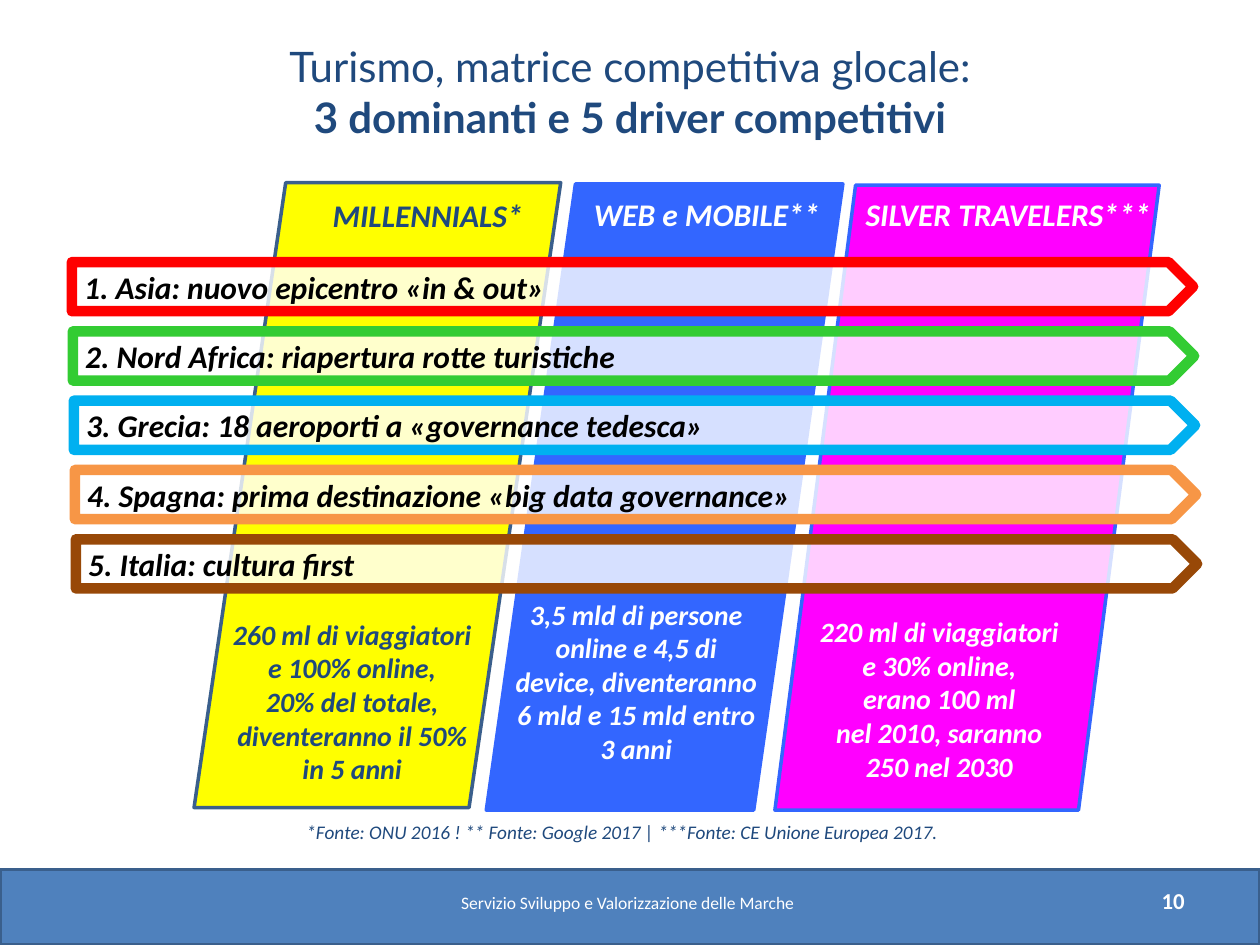
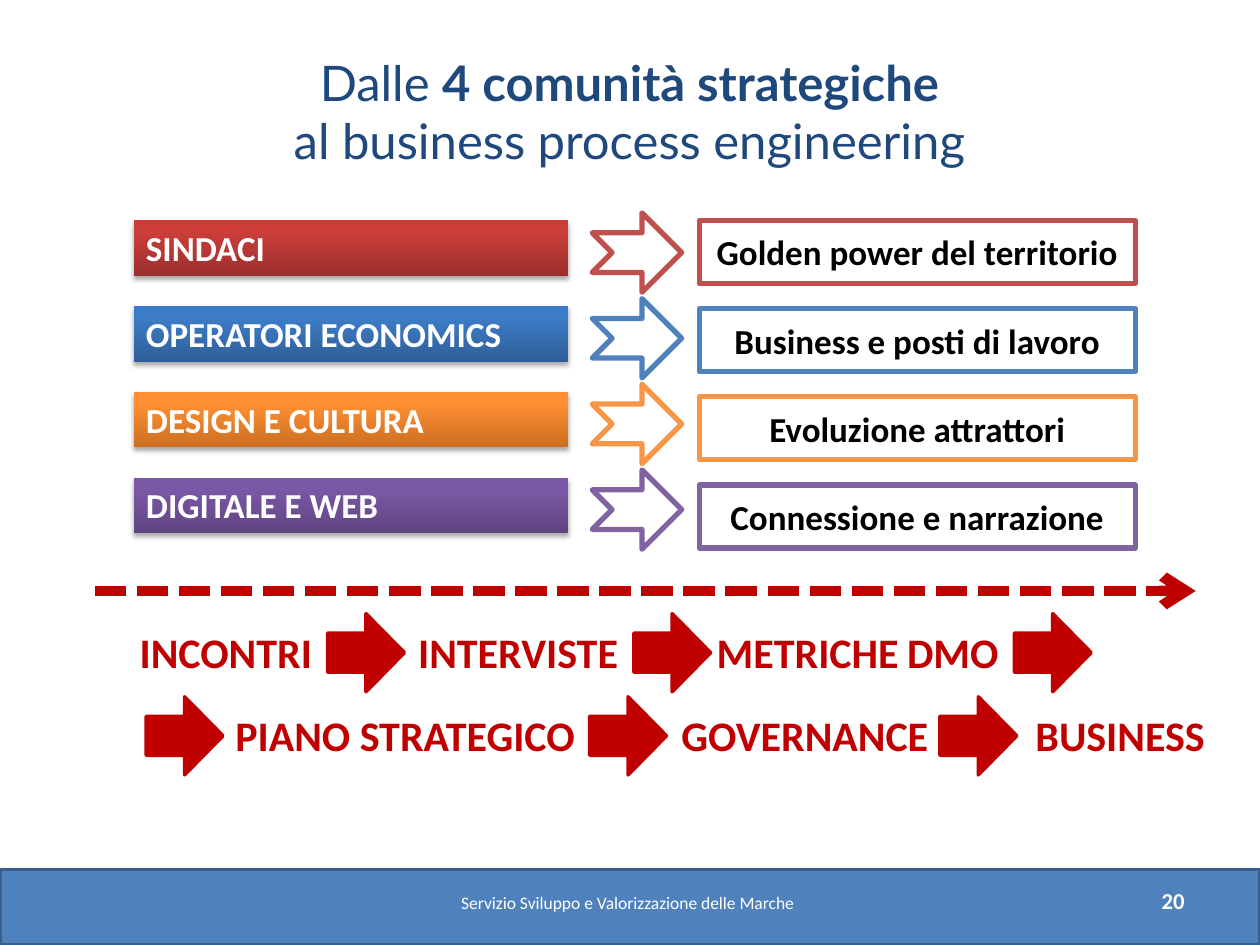
"""Build two slides on competitive tourism drivers and strategic communities."""
from copy import deepcopy
from dataclasses import dataclass
from typing import NamedTuple

from lxml import etree
from pptx import Presentation
from pptx.dml.color import RGBColor
from pptx.enum.shapes import MSO_CONNECTOR, MSO_SHAPE
from pptx.enum.text import MSO_ANCHOR, MSO_AUTO_SIZE, PP_ALIGN
from pptx.oxml.ns import qn
from pptx.util import Emu, Inches, Pt

RECTANGLE = MSO_SHAPE.RECTANGLE
PARALLELOGRAM = MSO_SHAPE.PARALLELOGRAM
PENTAGON = MSO_SHAPE.PENTAGON
RIGHT_ARROW = MSO_SHAPE.RIGHT_ARROW
NOTCHED_ARROW = MSO_SHAPE.NOTCHED_RIGHT_ARROW
STRAIGHT = MSO_CONNECTOR.STRAIGHT
LEFT, CENTER, RIGHT = PP_ALIGN.LEFT, PP_ALIGN.CENTER, PP_ALIGN.RIGHT
TOP, MIDDLE = MSO_ANCHOR.TOP, MSO_ANCHOR.MIDDLE
FIXED_SIZE = MSO_AUTO_SIZE.NONE

WIDTH, HEIGHT = Inches(10), Inches(7.5)
COLUMNS, ROWS = 100, 75
TITLE_ONLY = 5
TITLE_FONT, BODY_FONT = "Lato", "Calibri"
WHITE, BLACK, NAVY, CRIMSON = "FFFFFF", "000000", "1F497D", "C00000"
BAND_FILL, BAND_LINE = "4F81BD", "3A5F8C"
ROYAL, ORANGE = "3366FF", "F79646"
FOOTER = "Servizio Sviluppo e Valorizzazione delle Marche"


class Area(NamedTuple):
    """A rectangle in grid columns and rows."""
    column: float
    row: float
    columns: float
    rows: float


class Span(NamedTuple):
    """A stretch of title text."""
    text: str
    bold: bool = False


class Style(NamedTuple):
    """The look and alignment of a block of text."""
    size: float
    color: str
    bold: bool = True
    italic: bool = False
    align: PP_ALIGN = LEFT
    anchor: MSO_ANCHOR = TOP


@dataclass(frozen=True)
class Dominant:
    """A slanted column with its heading and figures."""
    area: Area
    fill: str
    line: str
    ink: str
    heading: str
    heading_area: Area
    figures: str
    figures_area: Area
    slant: float = 0.25


@dataclass(frozen=True)
class Driver:
    """A competitive driver that crosses the columns."""
    text: str
    color: str


@dataclass(frozen=True)
class Community:
    """A strategic community and what it leads to."""
    name: str
    outcome: str
    color: str
    gradient: tuple[str, str, str]


@dataclass(frozen=True)
class ProcessRow:
    """A row of process steps and the arrows between them."""
    row: float
    steps: tuple[tuple[str, float, float], ...]
    arrows: tuple[float, ...]


DOMINANTS = (
    Dominant(Area(61.5, 14.7, 30.5, 49.6), "FF00FF", ROYAL, WHITE,
             "SILVER TRAVELERS***", Area(67.4, 15, 25.2, 4),
             "220 ml di viaggiatori e 30% online,\nerano 100 ml\n"
             "nel 2010, saranno 250 nel 2030", Area(63.7, 48.3, 21.7, 14.5), 0.21),
    Dominant(Area(38.6, 14.6, 28.3, 49.7), ROYAL, ROYAL, WHITE,
             "WEB e MOBILE**", Area(45.3, 15, 21.6, 4),
             "3,5 mld di persone online e 4,5 di device, diventeranno "
             "6 mld e 15 mld entro 3 anni", Area(39.8, 46.9, 21.4, 17.2)),
    Dominant(Area(15.4, 14.5, 29.1, 49.6), "FFFF00", BAND_LINE, NAVY,
             "MILLENNIALS*", Area(23.4, 15.1, 21.1, 4),
             "260 ml di viaggiatori e 100% online,\n"
             "20% del totale, diventeranno il 50% in 5 anni",
             Area(17, 48.5, 21.9, 14.5)),
)
DRIVERS = (
    Driver("1. Asia: nuovo epicentro «in & out»", "FF0000"),
    Driver("2. Nord Africa: riapertura rotte turistiche", "33CC33"),
    Driver("3. Grecia: 18 aeroporti a «governance tedesca»", "00B0F0"),
    Driver("4. Spagna: prima destinazione «big data governance»", ORANGE),
    Driver("5. Italia: cultura first", "984807"),
)
COMMUNITIES = (
    Community("SINDACI", "Golden power del territorio", "C0504D",
              ("9C2F2D", "CB3E3A", "CE3B37")),
    Community("OPERATORI ECONOMICS", "Business e posti di lavoro", BAND_FILL,
              ("2F5F99", "3D7CC7", "3A7CCB")),
    Community("DESIGN E CULTURA", "Evoluzione attrattori", ORANGE,
              ("CC6E20", "FF9034", "FF9136")),
    Community("DIGITALE E WEB", "Connessione e narrazione", "8064A2",
              ("5F4480", "7B58A6", "7C57A8")),
)
PROCESS = (
    ProcessRow(49.2, (("INCONTRI", 10.1, 24.3), ("INTERVISTE", 32.2, 24.3),
                      ("METRICHE", 55.9, 24.3), ("DMO", 71, 12.1)),
               (26, 50.3, 80.5)),
    ProcessRow(55.8, (("PIANO STRATEGICO", 17.7, 32.3),
                      ("GOVERNANCE", 53.1, 31.5), ("BUSINESS", 81.2, 18.4)),
               (11.6, 46.8, 74.6)),
)


def color(value: str) -> RGBColor:
    """Turn a hex string into a colour."""
    return RGBColor.from_string(value)


def across(columns: float) -> Emu:
    """Measure grid columns."""
    return Emu(round(WIDTH * columns / COLUMNS))


def down(rows: float) -> Emu:
    """Measure grid rows."""
    return Emu(round(HEIGHT * rows / ROWS))


def place(area: Area) -> tuple[Emu, Emu, Emu, Emu]:
    """Convert an area to left, top, width and height."""
    return across(area.column), down(area.row), across(area.columns), down(area.rows)


def write(shape, text: str, style: Style) -> None:
    """Fill a shape with uniformly styled text."""
    frame = shape.text_frame
    frame.text = text
    frame.word_wrap = True
    frame.auto_size = FIXED_SIZE
    frame.vertical_anchor = style.anchor
    for paragraph in frame.paragraphs:
        paragraph.alignment = style.align
        for span in paragraph.runs:
            span.font.name = BODY_FONT
            span.font.size = Pt(style.size)
            span.font.bold = style.bold
            span.font.italic = style.italic
            span.font.color.rgb = color(style.color)


def add_text(page, area: Area, text: str, style: Style) -> None:
    """Add a text box."""
    write(page.shapes.add_textbox(*place(area)), text, style)


def add_block(page, kind, area: Area, fill: str, line: str = "", weight: float = 2):
    """Add a flat preset shape."""
    shape = page.shapes.add_shape(kind, *place(area))
    shape.shadow.inherit = False
    shape.fill.solid()
    shape.fill.fore_color.rgb = color(fill)
    if line:
        shape.line.color.rgb = color(line)
        shape.line.width = Pt(weight)
    else:
        shape.line.fill.background()
    return shape


def make_translucent(shape, percent: int) -> None:
    """Set the opacity of a solid fill."""
    tint = shape.fill._xPr.find(qn("a:solidFill"))[0]
    etree.SubElement(tint, qn("a:alpha"), val=str(percent * 1000))


def shade(shape, colors: tuple[str, str, str]) -> None:
    """Give a shape a vertical gradient and a soft shadow."""
    shape.fill.gradient()
    shape.fill.gradient_angle = 90
    properties = shape._element.spPr
    stop_list = properties.find(qn("a:gradFill")).find(qn("a:gsLst"))
    stop_list.append(deepcopy(stop_list[0]))
    for stop, value, position in zip(shape.fill.gradient_stops, colors, (0, 0.8, 1)):
        stop.color.rgb = color(value)
        stop.position = position
    shadow = etree.SubElement(properties.find(qn("a:effectLst")), qn("a:outerShdw"),
                              blurRad=str(Pt(3.1)), dist=str(Pt(1.8)),
                              dir="5400000", rotWithShape="0")
    tint = etree.SubElement(shadow, qn("a:srgbClr"), val=BLACK)
    etree.SubElement(tint, qn("a:alpha"), val="35000")


def add_timeline(page, start: float, end: float, row: float) -> None:
    """Draw the dashed arrow above the process."""
    line = page.shapes.add_connector(STRAIGHT, across(start), down(row),
                                     across(end), down(row))
    line.line.color.rgb = color(CRIMSON)
    line.line.width = Pt(6)
    properties = line._element.spPr
    outline = properties.find(qn("a:ln"))
    etree.SubElement(outline, qn("a:prstDash"), val="sysDash")
    etree.SubElement(outline, qn("a:tailEnd"), type="arrow")
    etree.SubElement(properties, qn("a:effectLst"))


def set_title(page, area: Area, lines: tuple[tuple[Span, ...], ...], size: int) -> None:
    """Place the title and format its spans."""
    title = page.shapes.title
    title.left, title.top, title.width, title.height = place(area)
    frame = title.text_frame
    frame.auto_size = FIXED_SIZE
    frame.vertical_anchor = MIDDLE
    paragraph = frame.paragraphs[0]
    paragraph.alignment = CENTER
    for number, line in enumerate(lines):
        if number:
            paragraph.add_line_break()
        for part in line:
            span = paragraph.add_run()
            span.text = part.text
            span.font.name = TITLE_FONT
            span.font.size = Pt(size)
            span.font.bold = part.bold
            span.font.color.rgb = color(NAVY)
    for line_break in paragraph._p.findall(qn("a:br")):
        etree.SubElement(line_break, qn("a:rPr"), sz=str(size * 100))


def add_page(deck, number: int):
    """Add a titled page with the footer band."""
    page = deck.slides.add_slide(deck.slide_layouts[TITLE_ONLY])
    add_block(page, RECTANGLE, Area(0, 69, COLUMNS, 6), BAND_FILL, BAND_LINE)
    add_text(page, Area(79.9, 69.5, 15.1, 4), str(number),
             Style(13, WHITE, align=RIGHT, anchor=MIDDLE))
    add_text(page, Area(28.9, 69.6, 41.8, 4), FOOTER,
             Style(10, WHITE, bold=False, align=CENTER, anchor=MIDDLE))
    return page


def build_matrix(deck) -> None:
    """Build the matrix of dominants and drivers."""
    page = add_page(deck, 10)
    set_title(page, Area(5, 2.9, 90, 8.7),
              ((Span("Turismo, matrice competitiva glocale:"),),
               (Span("3 dominanti e 5 driver competitivi", True),)), 24)
    for item in DOMINANTS:
        column = add_block(page, PARALLELOGRAM, item.area, item.fill, item.line)
        column.adjustments[0] = item.slant
        add_text(page, item.heading_area, item.heading,
                 Style(18, item.ink, italic=True, align=CENTER))
        add_text(page, item.figures_area, item.figures,
                 Style(16, item.ink, italic=True, align=CENTER))
    for index, driver in enumerate(DRIVERS):
        area = Area(5.7 + 0.08 * index, 20.8 + 5.5 * index, 89, 3.9)
        arrow = add_block(page, PENTAGON, area, WHITE, driver.color, 6)
        make_translucent(arrow, 80)
        write(arrow, driver.text, Style(18, BLACK, italic=True, anchor=MIDDLE))
    add_text(page, Area(6.5, 64.6, 85.8, 2.9),
             "*Fonte: ONU 2016 ! ** Fonte: Google 2017 | "
             "***Fonte: CE Unione Europea 2017.",
             Style(11, NAVY, bold=False, italic=True, align=CENTER))


def build_communities(deck) -> None:
    """Build the communities, their outcomes and the process."""
    page = add_page(deck, 20)
    set_title(page, Area(5, 2.9, 89.9, 11.8),
              ((Span("Dalle "), Span("4 comunità strategiche", True)),
               (Span("al business process engineering"),)), 28)
    for index, item in enumerate(COMMUNITIES):
        drop = 6.8 * index
        name = add_block(page, RECTANGLE, Area(10.6, 17.5 + drop, 34.5, 4.4), item.color)
        shade(name, item.gradient)
        write(name, item.name, Style(20, WHITE))
        add_block(page, NOTCHED_ARROW, Area(47, 16.9 + drop, 7.1, 6.3),
                  WHITE, item.color, 3)
        outcome = add_block(page, RECTANGLE, Area(55.5, 17.5 + 7 * index, 34.6, 5),
                            WHITE, item.color, 3)
        write(outcome, item.outcome, Style(20, BLACK, align=CENTER, anchor=MIDDLE))
    add_timeline(page, 7.5, 94.9, 46.9)
    for line in PROCESS:
        for text, column, columns in line.steps:
            add_text(page, Area(column, line.row, columns, 5), text, Style(24, CRIMSON))
        for column in line.arrows:
            add_block(page, RIGHT_ARROW, Area(column, line.row - 0.5, 6.1, 6.2),
                      CRIMSON, CRIMSON)


def main() -> None:
    """Build and save the deck."""
    deck = Presentation()
    deck.slide_width, deck.slide_height = WIDTH, HEIGHT
    build_matrix(deck)
    build_communities(deck)
    deck.save("out.pptx")


if __name__ == "__main__":
    main()
